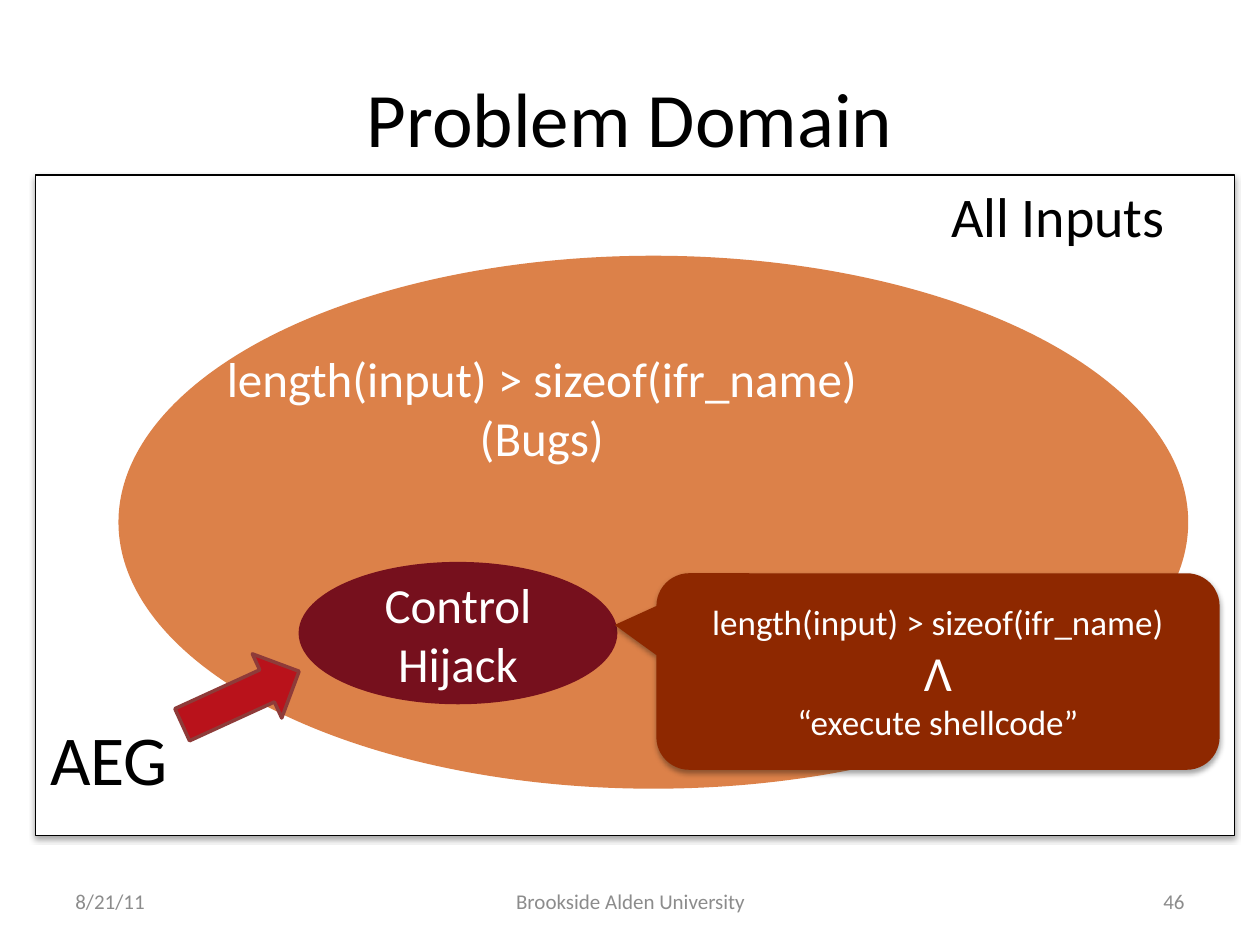
from dataclasses import dataclass
from typing import Optional

from lxml.etree import SubElement
from pptx import Presentation
from pptx.dml.color import RGBColor
from pptx.enum.shapes import MSO_SHAPE as Geo
from pptx.enum.text import MSO_ANCHOR as Anchor, PP_ALIGN as Align
from pptx.oxml.ns import qn
from pptx.util import Inches, Pt

FONT = "Calibri"
COLORS = {
    "black": "000000",
    "white": "FFFFFF",
    "bugs": "D1570D",
    "hijack": "76101D",
    "condition": "8E2800",
    "arrow": "B9121B",
    "arrow_edge": "8E3B39",
    "footer": "8C8C8C",
}


@dataclass(frozen=True)
class Box:
    left: float
    top: float
    width: float
    height: float

    def lengths(self) -> list:
        return [Inches(v) for v in (self.left, self.top, self.width, self.height)]


@dataclass(frozen=True)
class Text:
    """Lines of text; sizes holds one size for all lines or one for each."""
    lines: tuple
    sizes: tuple
    color: str = "black"
    align: Align = Align.CENTER
    anchor: Anchor = Anchor.MIDDLE
    wrap: bool = True


@dataclass(frozen=True)
class Region:
    geometry: Geo
    box: Box
    fill: str
    opacity: int = 100
    edge: Optional[str] = None
    edge_width: float = 0.75
    rotation: float = 0
    adjustments: tuple = ()
    shadow: bool = False
    text: Optional[Text] = None


def rgb(name: str) -> RGBColor:
    return RGBColor.from_string(COLORS[name])


def write(frame, text: Text) -> None:
    frame.text = "\n".join(text.lines)
    frame.word_wrap = text.wrap
    frame.vertical_anchor = text.anchor
    sizes = text.sizes * len(text.lines) if len(text.sizes) == 1 else text.sizes
    for paragraph, size in zip(frame.paragraphs, sizes):
        paragraph.alignment = text.align
        for run in paragraph.runs:
            run.font.name = FONT
            run.font.size = Pt(size)
            run.font.color.rgb = rgb(text.color)


def add_label(slide, box: Box, text: Text) -> None:
    write(slide.shapes.add_textbox(*box.lengths()).text_frame, text)


def add_drop_shadow(shape) -> None:
    effects = shape._element.spPr.find(qn("a:effectLst"))
    shadow = SubElement(effects, qn("a:outerShdw"), blurRad=str(Pt(3.1)),
                        dist=str(Pt(1.8)), dir="5400000", rotWithShape="0")
    color = SubElement(shadow, qn("a:srgbClr"), val=COLORS["black"])
    SubElement(color, qn("a:alpha"), val="35000")


def add_region(slide, region: Region) -> None:
    shape = slide.shapes.add_shape(region.geometry, *region.box.lengths())
    shape.rotation = region.rotation
    for index, value in enumerate(region.adjustments):
        shape.adjustments[index] = value
    shape.fill.solid()
    shape.fill.fore_color.rgb = rgb(region.fill)
    if region.opacity < 100:
        color = shape._element.spPr.find(qn("a:solidFill")).find(qn("a:srgbClr"))
        SubElement(color, qn("a:alpha"), val=str(region.opacity * 1000))
    if region.edge:
        shape.line.color.rgb = rgb(region.edge)
        shape.line.width = Pt(region.edge_width)
    else:
        shape.line.fill.background()
    shape.shadow.inherit = False
    if region.shadow:
        add_drop_shadow(shape)
    if region.text:
        write(shape.text_frame, region.text)


OVERFLOW = "length(input) > sizeof(ifr_name)"

ALL_INPUTS = Region(Geo.RECTANGLE, Box(0.28, 1.39, 9.52, 5.24), "white",
                    edge="black", shadow=True)
BUGS = Region(Geo.OVAL, Box(0.94, 2.03, 8.49, 4.23), "bugs", opacity=75)
HIJACK = Region(Geo.OVAL, Box(2.37, 4.46, 2.53, 1.13), "hijack",
                text=Text(("Control Hijack",), (28,), "white"))
AEG_ARROW = Region(Geo.RIGHT_ARROW, Box(1.4, 5.26, 1.02, 0.56), "arrow",
                   edge="arrow_edge", edge_width=2, rotation=335.4)
EXPLOIT_CONDITION = Region(
    Geo.ROUNDED_RECTANGULAR_CALLOUT, Box(5.21, 4.55, 4.47, 1.56), "condition",
    adjustments=(-0.574, -0.237, 0.167), shadow=True,
    text=Text((OVERFLOW, "Λ", "“execute shellcode”"), (20, 28, 20), "white"))

FOOTERS = (
    ("8/21/11", 0.5, 2.33, Align.LEFT),
    ("Brookside Alden University", 3.42, 3.17, Align.CENTER),
    ("46", 7.17, 2.33, Align.RIGHT),
)


def main() -> None:
    deck = Presentation()
    deck.slide_width, deck.slide_height = Inches(10), Inches(7.5)
    slide = deck.slides.add_slide(deck.slide_layouts[5])

    title = slide.shapes.title
    title.left, title.top, title.width, title.height = Box(0.5, 0.3, 9, 1.25).lengths()
    write(title.text_frame, Text(("Problem Domain",), (44,)))

    add_region(slide, ALL_INPUTS)
    add_label(slide, Box(7.45, 1.39, 2.77, 0.64),
              Text(("All Inputs",), (32,), align=Align.LEFT, anchor=Anchor.TOP))
    add_region(slide, BUGS)
    add_label(slide, Box(1.36, 2.72, 5.88, 1.04),
              Text((OVERFLOW, "(Bugs)"), (28,), "white", anchor=Anchor.TOP))
    # The title belongs in front of the input space that it overlaps.
    slide.shapes._spTree.append(title._element)

    for words, left, width, align in FOOTERS:
        add_label(slide, Box(left, 6.95, width, 0.4),
                  Text((words,), (12,), "footer", align))

    add_region(slide, HIJACK)
    add_region(slide, AEG_ARROW)
    add_label(slide, Box(0.3, 5.63, 1.15, 0.77),
              Text(("AEG",), (40,), align=Align.LEFT, anchor=Anchor.TOP, wrap=False))
    add_region(slide, EXPLOIT_CONDITION)

    deck.save("out.pptx")


if __name__ == "__main__":
    main()
